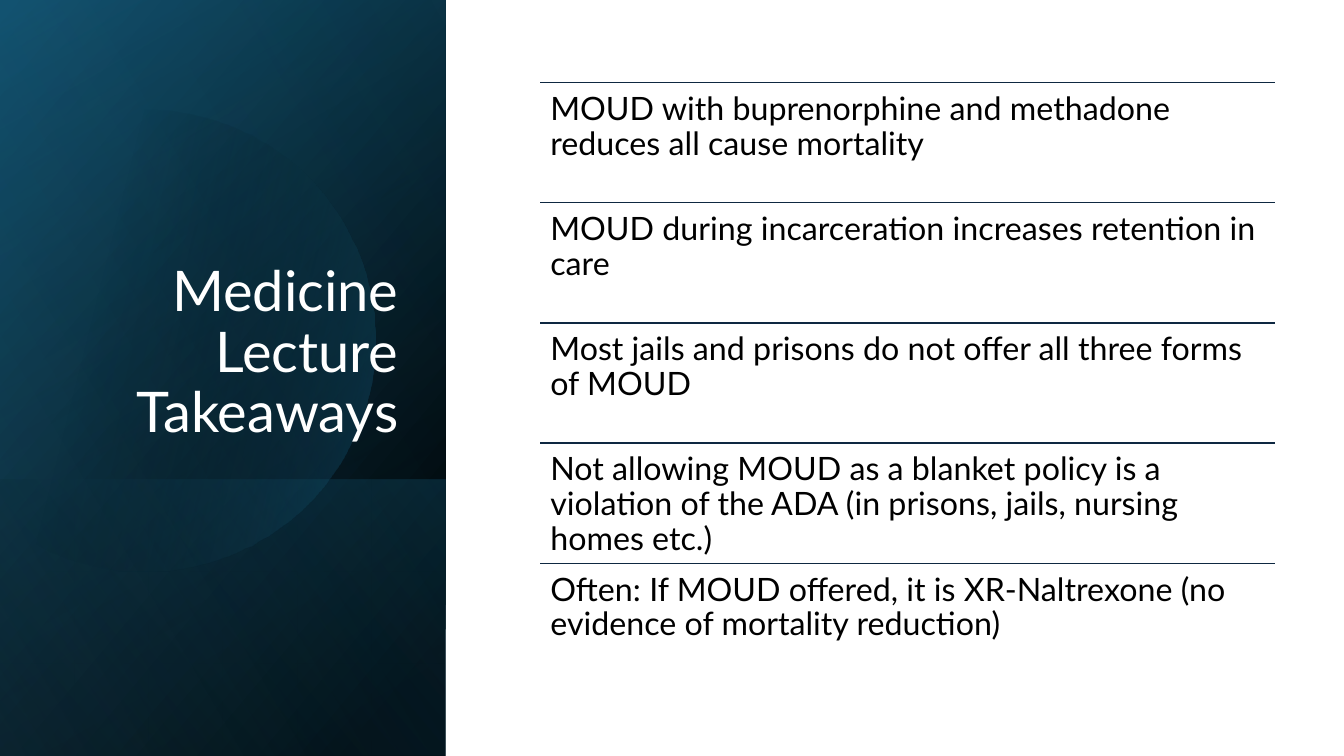
import math
from dataclasses import dataclass

import pptx
import pptx.dml.color
import pptx.enum.shapes
import pptx.enum.text
import pptx.oxml.ns
import pptx.util
from lxml import etree

PX = 9144  # EMU per px, 100 px to the inch
FONT = "Lato"
COLORS = {
    "black": "000000",
    "white": "FFFFFF",
    "deep": "104862",
    "teal": "156082",
    "sky": "46B1E1",
    "rule": "0E2841",
}


@dataclass(frozen=True)
class Stop:
    position: int
    color: str
    opacity: int = 100


@dataclass(frozen=True)
class Gradient:
    start: Stop
    end: Stop
    angle: int


@dataclass(frozen=True)
class Panel:
    """A rectangle given before its quarter turn."""
    left: int
    top: int
    width: int
    height: int
    gradient: Gradient


BASE_PANELS = [
    Panel(-154, 154, 750, 442,
          Gradient(Stop(8, "black"), Stop(100, "deep"), 50)),
    Panel(-154, 154, 750, 442,
          Gradient(Stop(0, "black", 0), Stop(99, "teal", 46), 30)),
    Panel(84, 392, 274, 442,
          Gradient(Stop(2, "teal", 29), Stop(100, "black", 30), 130)),
]
DISC_GRADIENT = Gradient(Stop(29, "black", 0), Stop(100, "teal", 43), 14)
SHEEN_PANEL = Panel(-154, 154, 750, 442,
                    Gradient(Stop(0, "black", 0), Stop(99, "sky", 11), 120))

DISC_X, DISC_Y, DISC_RADIUS = 143, 338, 229
DISC_STEPS = 120

LIST_LEFT, LIST_TOP, LIST_WIDTH, LIST_HEIGHT = 536, 82, 729, 596
TAKEAWAYS = [
    "MOUD with buprenorphine and methadone reduces all cause mortality",
    "MOUD during incarceration increases retention in care",
    "Most jails and prisons do not offer all three forms of MOUD",
    "Not allowing MOUD as a blanket policy is a violation of the ADA "
    "(in prisons, jails, nursing homes etc.)",
    "Often: If MOUD offered, it is XR-Naltrexone "
    "(no evidence of mortality reduction)",
]


def px(value: float) -> pptx.util.Emu:
    return pptx.util.Emu(round(value * PX))


def rgb(name: str) -> pptx.dml.color.RGBColor:
    return pptx.dml.color.RGBColor.from_string(COLORS[name])


def apply_gradient(sp, gradient: Gradient) -> None:
    """Fill a shape with a clockwise-angled gradient and drop its outline."""
    sp.shadow.inherit = False
    sp.line.fill.background()
    sp.fill.gradient()
    sp.fill.gradient_angle = 360 - gradient.angle
    stops = (gradient.start, gradient.end)
    for target, stop in zip(sp.fill.gradient_stops, stops):
        target.position = stop.position / 100
        target.color.rgb = rgb(stop.color)
    qn = pptx.oxml.ns.qn
    for clr, stop in zip(sp._element.spPr.iter(qn("a:srgbClr")), stops):
        if stop.opacity < 100:
            etree.SubElement(clr, qn("a:alpha"), val=str(stop.opacity * 1000))


def add_panel(shapes, panel: Panel) -> None:
    sp = shapes.add_shape(
        pptx.enum.shapes.MSO_SHAPE.RECTANGLE,
        px(panel.left), px(panel.top), px(panel.width), px(panel.height))
    sp.rotation = 90
    sp._element.spPr.find(pptx.oxml.ns.qn("a:xfrm")).set("flipH", "1")
    apply_gradient(sp, panel.gradient)


def add_disc(shapes) -> None:
    """Draw the circle cut off by the left edge of the slide."""
    reach = math.pi - math.acos(DISC_X / DISC_RADIUS)
    angles = [reach * (2 * i / DISC_STEPS - 1) for i in range(DISC_STEPS + 1)]
    points = [(DISC_X + DISC_RADIUS * math.cos(a),
               DISC_Y + DISC_RADIUS * math.sin(a)) for a in angles]
    builder = shapes.build_freeform(*points[0], scale=PX)
    builder.add_line_segments(points[1:], close=True)
    apply_gradient(builder.convert_to_shape(), DISC_GRADIENT)


def add_text(shapes, text: str, left: float, top: float, width: float,
             height: float, size: int, color: str):
    tf = shapes.add_textbox(px(left), px(top), px(width), px(height)).text_frame
    tf.word_wrap = True
    tf.text = text
    p = tf.paragraphs[0]
    p.line_spacing = 0.9
    font = p.runs[0].font
    font.name = FONT
    font.size = pptx.util.Pt(size)
    font.color.rgb = rgb(color)
    return tf


def add_title(shapes) -> None:
    tf = add_text(shapes, "Medicine Lecture Takeaways",
                  64, 184, 341, 262, 40, "white")
    tf.vertical_anchor = pptx.enum.text.MSO_ANCHOR.BOTTOM
    tf.paragraphs[0].alignment = pptx.enum.text.PP_ALIGN.RIGHT


def add_rule(shapes, y: float) -> None:
    line = shapes.add_connector(
        pptx.enum.shapes.MSO_CONNECTOR.STRAIGHT,
        px(LIST_LEFT), px(y), px(LIST_LEFT + LIST_WIDTH), px(y))
    line.line.color.rgb = rgb("rule")
    line.line.width = pptx.util.Pt(1)
    etree.SubElement(line._element.spPr, pptx.oxml.ns.qn("a:effectLst"))


def add_takeaways(shapes) -> None:
    row_height = LIST_HEIGHT / len(TAKEAWAYS)
    for i, takeaway in enumerate(TAKEAWAYS):
        y = LIST_TOP + i * row_height
        add_rule(shapes, y)
        tf = add_text(shapes, takeaway, LIST_LEFT, y, LIST_WIDTH, row_height,
                      23, "black")
        tf.margin_top = tf.margin_bottom = px(10)


def main() -> None:
    prs = pptx.Presentation()
    prs.slide_width, prs.slide_height = px(1333), px(750)
    shapes = prs.slides.add_slide(prs.slide_layouts[6]).shapes
    for panel in BASE_PANELS:
        add_panel(shapes, panel)
    add_disc(shapes)
    add_panel(shapes, SHEEN_PANEL)
    add_title(shapes)
    add_takeaways(shapes)
    prs.save("out.pptx")


if __name__ == "__main__":
    main()
